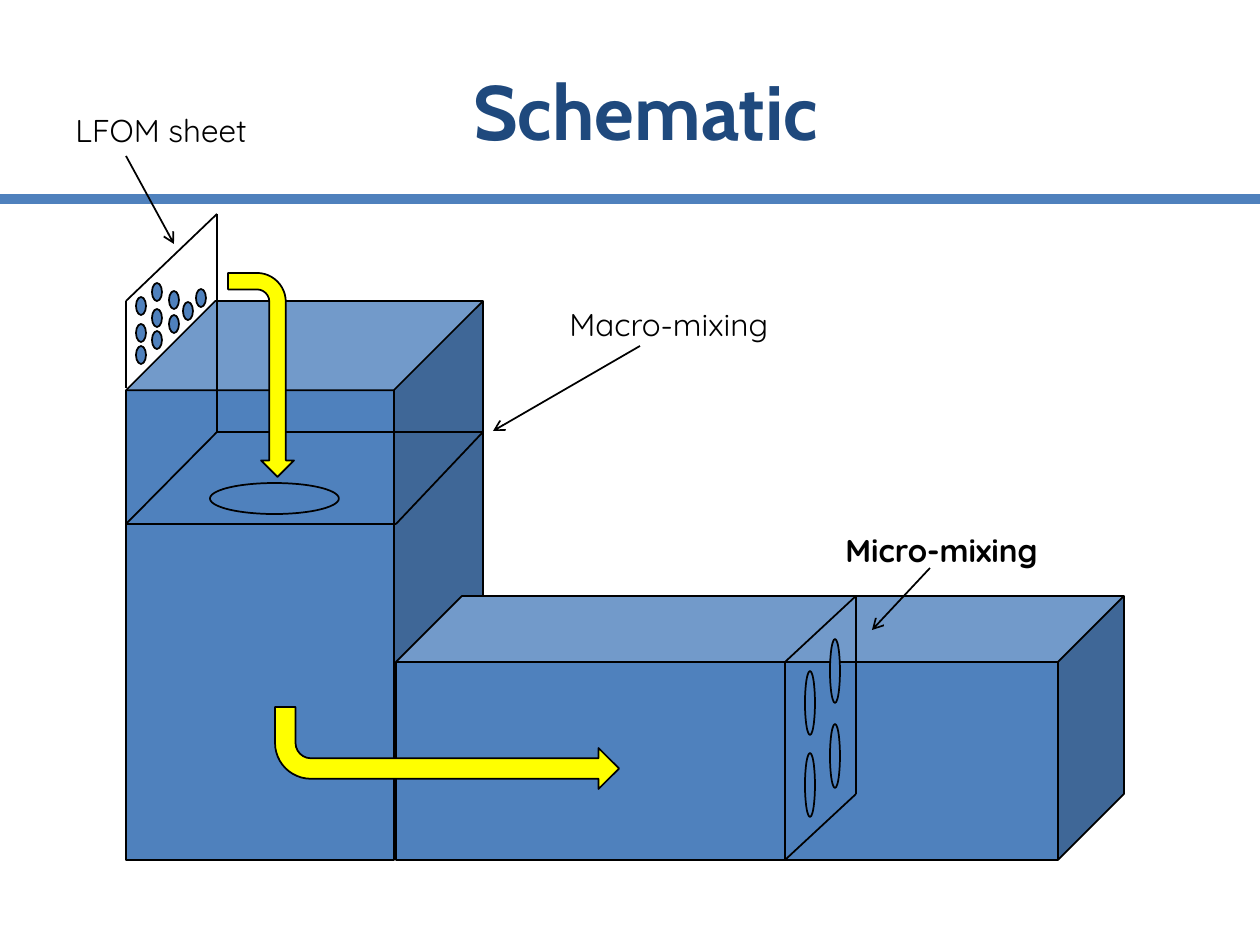
from itertools import pairwise

from lxml import etree
from pptx import Presentation, util as u
from pptx.dml.color import RGBColor
from pptx.enum import shapes, text
from pptx.oxml.ns import qn

PX = 914400 / 126
BLUE, NAVY, YELLOW, BLACK = "4F81BD", "1F497D", "FFFF00", "000000"
SHAPE = shapes.MSO_SHAPE


def px(*values):
    return [round(v * PX) for v in values]


def color(value):
    return RGBColor.from_string(value)


def add_shape(s, kind, x, y, w, h, fill=BLUE, rotation=0, flip=False):
    sp = s.shapes.add_shape(kind, *px(x, y, w, h))
    sp.shadow.inherit = False
    sp.fill.solid()
    sp.fill.fore_color.rgb = color(fill)
    sp.line.color.rgb = color(BLACK)
    sp.line.width = u.Pt(1)
    sp.rotation = rotation
    if flip:
        sp._element.spPr.xfrm.set("flipH", "1")
    return sp


def add_line(s, start, end, stroke=BLACK, width=1, arrow=False):
    line = s.shapes.add_connector(
        shapes.MSO_CONNECTOR.STRAIGHT, *px(*start, *end))
    line.line.color.rgb = color(stroke)
    line.line.width = u.Pt(width)
    if arrow:
        ln = line.line._get_or_add_ln()
        etree.SubElement(ln, qn("a:tailEnd"), type="arrow")
    etree.SubElement(line._element.spPr, qn("a:effectLst"))


def add_path(s, x, y, points):
    """Join points, given relative to (x, y), with straight lines."""
    moved = [(x + dx, y + dy) for dx, dy in points]
    for start, end in pairwise(moved):
        add_line(s, start, end)


def add_text(s, words, x, y, w, h, font="Quicksand", size=18, fill=BLACK,
             bold=False, align=text.PP_ALIGN.LEFT,
             anchor=text.MSO_ANCHOR.TOP):
    tf = s.shapes.add_textbox(*px(x, y, w, h)).text_frame
    tf.word_wrap = True
    tf.vertical_anchor = anchor
    p = tf.paragraphs[0]
    p.alignment = align
    r = p.add_run()
    r.text = words
    r.font.name = font
    r.font.size = u.Pt(size)
    r.font.bold = bold
    r.font.color.rgb = color(fill)


def add_header(s, x, y, w, h):
    add_line(s, (x, y + h), (x + w, y + h), stroke=BLUE, width=6)
    add_text(s, "Schematic", x + 63, y + 31, w - 94, h - 41, font="Cabin",
             size=44, fill=NAVY, bold=True, align=text.PP_ALIGN.CENTER,
             anchor=text.MSO_ANCHOR.MIDDLE)


def add_tower(s, x, y, w, h):
    """Macro-mixing tank with its orifice plate and the sheet above it."""
    add_shape(s, SHAPE.CUBE, x, y, w, h)
    back, front, right = 131, 223, 270
    add_path(s, x, y, [(0, front), (right, front), (w, back), (91, back),
                       (0, front)])
    add_shape(s, SHAPE.OVAL, x + 84, y + 182, 129, 31)

    add_path(s, x, y, [(0, 87), (0, 0), (91, -87), (91, back)])
    hole_columns = {10: (-4, 23, 45), 26: (-18, 8, 30), 43: (-10, 14),
                    57: (1,), 70: (-12,)}
    for dx, tops in hole_columns.items():
        for dy in tops:
            add_shape(s, SHAPE.OVAL, x + dx, y + dy, 10, 18)


def add_channel(s, x, y, w, h):
    """Micro-mixing channel with its perforated plate."""
    add_shape(s, SHAPE.CUBE, x, y, w, h)
    near, far, depth = 389, 460, 66
    add_path(s, x, y, [(near, h), (near, depth), (far, 0), (far, h - depth),
                       (near, h)])
    for dx, tops in {409: (75, 157), 434: (43, 128)}.items():
        for dy in tops:
            add_shape(s, SHAPE.OVAL, x + dx, y + dy, 10, 64)


def add_callout(s, words, x, y, w, start, end, bold=False):
    """Label with an arrow, whose ends are relative to the label."""
    add_text(s, words, x, y, w, 50, bold=bold)
    add_line(s, (x + start[0], y + start[1]), (x + end[0], y + end[1]),
             arrow=True)


def main():
    prs = Presentation()
    prs.slide_width, prs.slide_height = px(1260, 945)
    s = prs.slides.add_slide(prs.slide_layouts[6])

    add_header(s, 0, 0, 1260, 199)
    add_tower(s, 126, 301, 357, 559)
    add_channel(s, 396, 596, 728, 264)
    add_callout(s, "LFOM sheet", 63, 105, 294, (63, 51), (111, 139))
    add_callout(s, "Macro-mixing", 557, 299, 325, (83, 47), (-64, 132))
    add_callout(s, "Micro-mixing", 833, 525, 294, (97, 43), (39, 105),
                bold=True)
    add_shape(s, SHAPE.BENT_ARROW, 159, 342, 204, 66, fill=YELLOW,
              rotation=90)
    add_shape(s, SHAPE.BENT_ARROW, 275, 707, 344, 82, fill=YELLOW,
              rotation=180, flip=True)

    prs.save("out.pptx")


if __name__ == "__main__":
    main()
